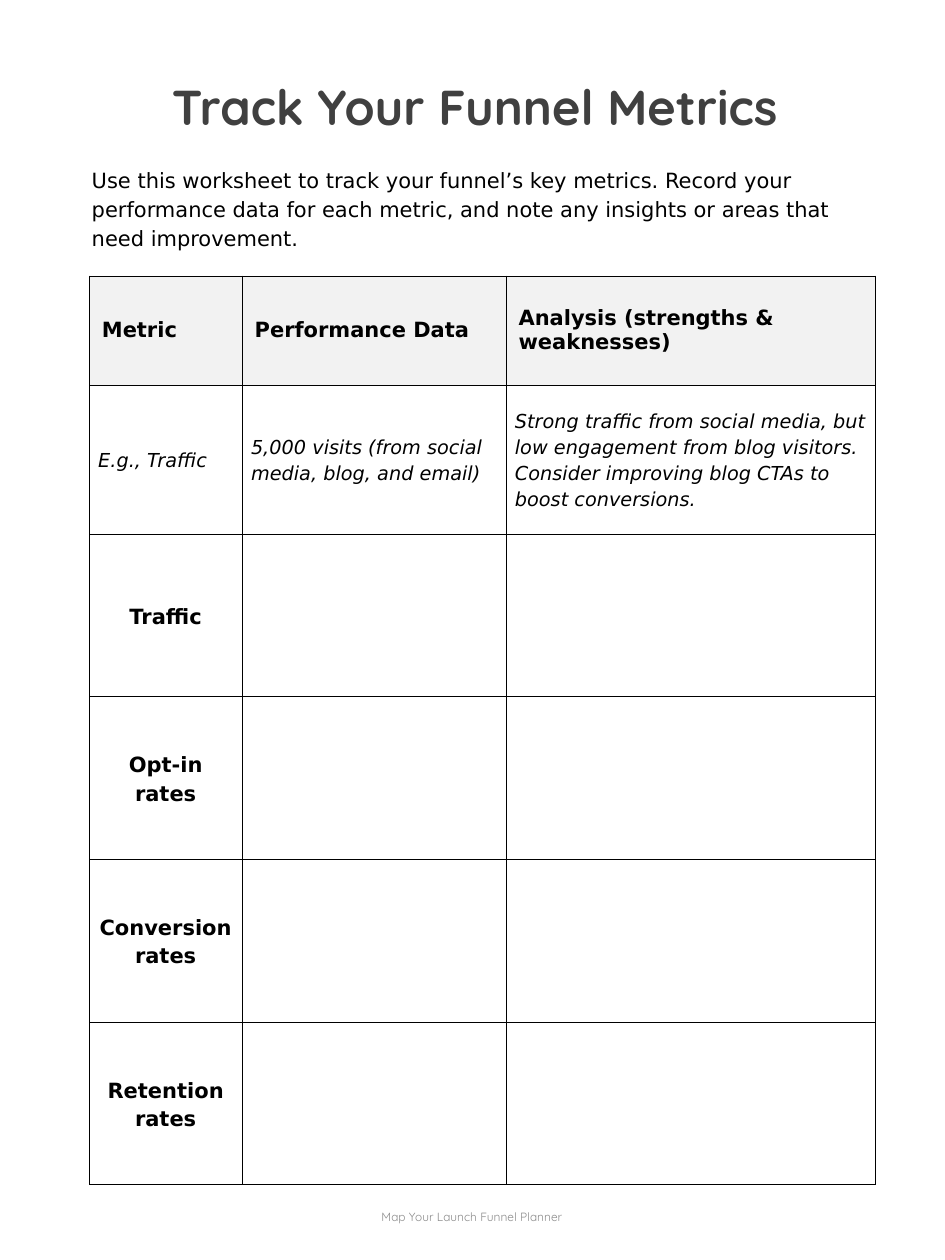
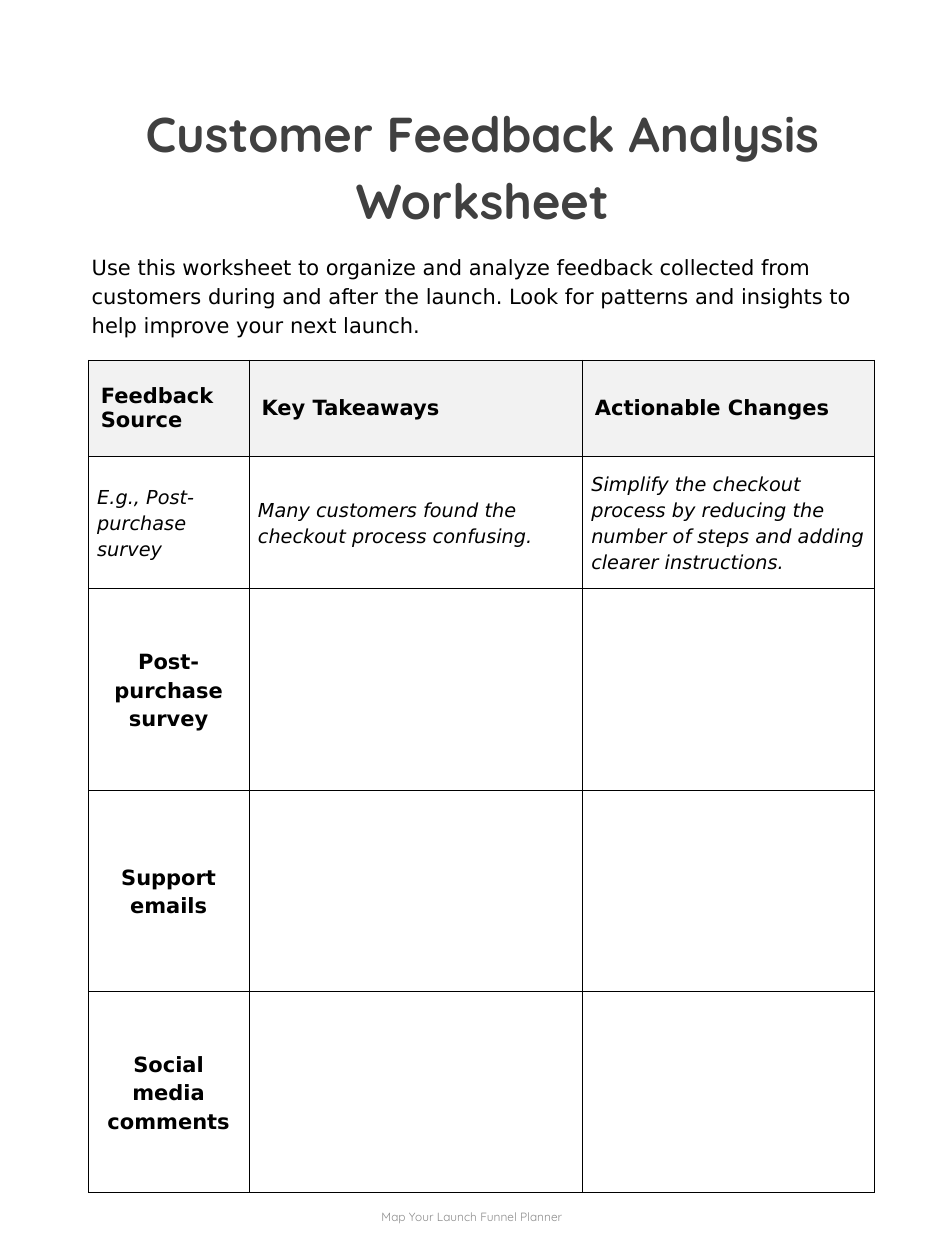
import pptx
import pptx.util
import pptx.dml.color
import pptx.enum.text
import pptx.oxml
import pptx.oxml.ns

Cm = pptx.util.Cm
Pt = pptx.util.Pt
Align = pptx.enum.text.PP_ALIGN
Anchor = pptx.enum.text.MSO_ANCHOR
AutoSize = pptx.enum.text.MSO_AUTO_SIZE

COLORS = {
    "page": "FFFFFF",
    "title": "404040",
    "text": "000000",
    "footer": "8C8C8C",
    "header": "F2F2F2",
    "border": "000000",
}
TITLE_FONT = "Quicksand"
BODY_FONT = "DejaVu Sans"
FOOTER = "Map Your Launch Funnel Planner"

worksheets = [
    {
        "title": "Track Your Funnel Metrics",
        "title_box": (1.3, 1.24, 16.54, 1.5),
        "intro": "Use this worksheet to track your funnel’s key metrics. Record your "
                 "performance data for each metric, and note any insights or areas that "
                 "need improvement.",
        "intro_top": 3.18,
        "table_at": (1.8, 5.56),
        "widths": [3.08, 5.32, 7.44],
        "heights": [2.2, 3.0, 3.28],
        "header": ["Metric", "Performance Data", "Analysis (strengths & weaknesses)"],
        "example": [
            "E.g., Traffic",
            "5,000 visits (from social media, blog, and email)",
            "Strong traffic from social media, but low engagement from blog visitors. "
            "Consider improving blog CTAs to boost conversions.",
        ],
        "topics": ["Traffic", "Opt-in rates", "Conversion rates", "Retention rates"],
    },
    {
        "title": "Customer Feedback Analysis Worksheet",
        "title_box": (1.45, 1.8, 16.54, 2.87),
        "intro": "Use this worksheet to organize and analyze feedback collected from "
                 "customers during and after the launch. Look for patterns and insights to "
                 "help improve your next launch.",
        "intro_top": 4.93,
        "table_at": (1.78, 7.26),
        "widths": [3.24, 6.72, 5.89],
        "heights": [1.94, 2.66, 4.06],
        "header": ["Feedback Source", "Key Takeaways", "Actionable Changes"],
        "example": [
            "E.g., Post-purchase survey",
            "Many customers found the checkout process confusing.",
            "Simplify the checkout process by reducing the number of steps and adding "
            "clearer instructions.",
        ],
        "topics": ["Post-purchase survey", "Support emails", "Social media comments"],
    },
]


def write(frame, text, size, color, font=BODY_FONT, bold=False, italic=False,
          align=Align.LEFT, line=None, after=None):
    frame.text = text
    frame.word_wrap = True
    paragraph = frame.paragraphs[0]
    paragraph.alignment = align
    if line:
        paragraph.line_spacing = line
    if after:
        paragraph.space_after = Pt(after)
    for run in paragraph.runs:
        run.font.name = font
        run.font.size = Pt(size)
        run.font.bold = bold
        run.font.italic = italic
        run.font.color.rgb = pptx.dml.color.RGBColor.from_string(COLORS[color])


def add_borders(cell):
    properties = cell._tc.get_or_add_tcPr()
    for position, side in enumerate(["lnL", "lnR", "lnT", "lnB"]):
        border = pptx.oxml.parse_xml(
            f'<a:{side} {pptx.oxml.ns.nsdecls("a")} w="3175"><a:solidFill>'
            f'<a:srgbClr val="{COLORS["border"]}"/></a:solidFill></a:{side}>')
        properties.insert(position, border)


prs = pptx.Presentation()
prs.slide_width = Cm(19.05)
prs.slide_height = Cm(25.4)

for sheet in worksheets:
    slide = prs.slides.add_slide(prs.slide_layouts[5])
    slide.background.fill.solid()
    slide.background.fill.fore_color.rgb = pptx.dml.color.RGBColor.from_string(COLORS["page"])

    title = slide.shapes.title
    title.left, title.top, title.width, title.height = map(Cm, sheet["title_box"])
    title.fill.solid()
    title.fill.fore_color.rgb = pptx.dml.color.RGBColor.from_string(COLORS["page"])
    write(title.text_frame, sheet["title"], 28, "title", TITLE_FONT, bold=True,
          align=Align.CENTER, line=1.14)
    title.text_frame.vertical_anchor = Anchor.TOP
    title.text_frame.auto_size = AutoSize.SHAPE_TO_FIT_TEXT

    intro = slide.shapes.add_textbox(Cm(1.6), Cm(sheet["intro_top"]), Cm(16.23), Cm(1.96))
    write(intro.text_frame, sheet["intro"], 12, "text", line=1.15, after=12)
    intro.text_frame.auto_size = AutoSize.SHAPE_TO_FIT_TEXT

    footer = slide.shapes.add_textbox(Cm(6.3), Cm(23.85), Cm(6.43), Cm(1.35))
    write(footer.text_frame, FOOTER, 6.8, "footer", TITLE_FONT, align=Align.CENTER)
    footer.text_frame.vertical_anchor = Anchor.MIDDLE

    header_height, example_height, topic_height = sheet["heights"]
    heights = [header_height, example_height] + [topic_height] * len(sheet["topics"])
    left, top = sheet["table_at"]
    metrics = slide.shapes.add_table(
        len(heights), 3, Cm(left), Cm(top),
        Cm(sum(sheet["widths"])), Cm(sum(heights))).table
    metrics.first_row = False
    metrics.horz_banding = False
    for column, width in zip(metrics.columns, sheet["widths"]):
        column.width = Cm(width)
    for row, height in zip(metrics.rows, heights):
        row.height = Cm(height)

    rows = [sheet["header"], sheet["example"]] + [[topic, "", ""] for topic in sheet["topics"]]
    for r, texts in enumerate(rows):
        for c, text in enumerate(texts):
            cell = metrics.cell(r, c)
            cell.vertical_anchor = Anchor.MIDDLE
            if r == 0:
                cell.fill.solid()
                cell.fill.fore_color.rgb = pptx.dml.color.RGBColor.from_string(COLORS["header"])
                write(cell.text_frame, text, 12, "text", bold=True)
            else:
                cell.fill.background()
                cell.margin_left = cell.margin_right = Cm(0.18)
                cell.margin_top = cell.margin_bottom = 0
                if r == 1:
                    write(cell.text_frame, text, 11, "text", italic=True, line=1.15, after=12)
                elif text:
                    write(cell.text_frame, text, 12, "text", bold=True,
                          align=Align.CENTER, line=1.15, after=12)
            add_borders(cell)

prs.save("out.pptx")
